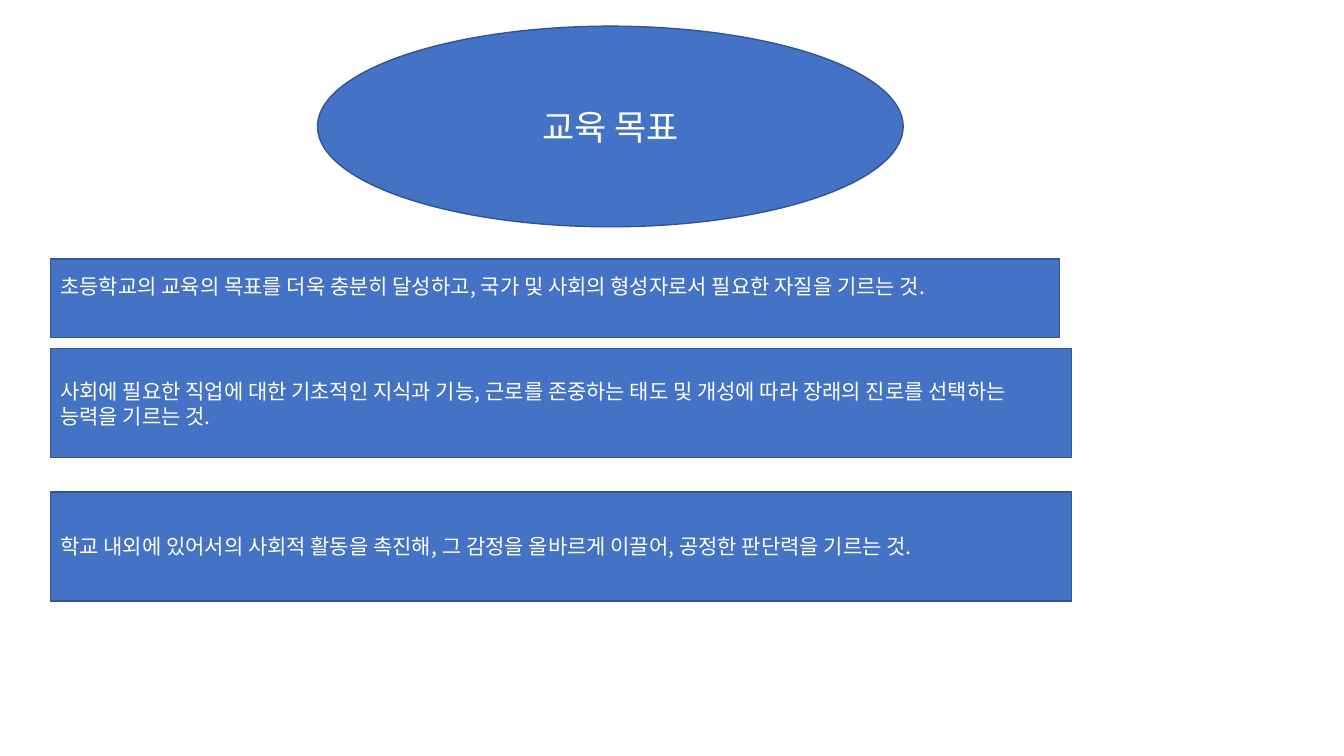
from lxml.etree import SubElement
from pptx import Presentation
from pptx.dml.color import RGBColor
from pptx.enum.shapes import MSO_SHAPE
from pptx.enum.text import MSO_ANCHOR, PP_ALIGN
from pptx.oxml.ns import qn
from pptx.util import Pt

FONT = "Noto Sans CJK KR"
COLORS = {"fill": "4472C4", "line": "325491", "text": "FFFFFF"}

prs = Presentation()
prs.slide_width, prs.slide_height = Pt(960), Pt(540)
s = prs.slides.add_slide(prs.slide_layouts[6])


def add_panel(text, box, kind=MSO_SHAPE.RECTANGLE, size=15, align=PP_ALIGN.LEFT, bottom=3.6):
    sp = s.shapes.add_shape(kind, *[Pt(v) for v in box])
    sp.shadow.inherit = False
    sp.fill.solid()
    sp.fill.fore_color.rgb = RGBColor.from_string(COLORS["fill"])
    sp.line.color.rgb = RGBColor.from_string(COLORS["line"])
    sp.line.width = Pt(1)
    tf = sp.text_frame
    tf.word_wrap = True
    tf.vertical_anchor = MSO_ANCHOR.MIDDLE
    tf.margin_bottom = Pt(bottom)
    p = tf.paragraphs[0]
    p.alignment = align
    r = p.add_run()
    r.text = text
    r.font.size = Pt(size)
    r.font.name = FONT
    r.font.color.rgb = RGBColor.from_string(COLORS["text"])
    SubElement(r.font._element, qn("a:ea"), typeface=FONT)


add_panel("교육 목표", (226.8, 18.7, 418.3, 143.3), kind=MSO_SHAPE.OVAL, size=25, align=PP_ALIGN.CENTER)

goals = [
    ("초등학교의 교육의 목표를 더욱 충분히 달성하고, 국가 및 사회의 형성자로서 필요한 자질을 기르는 것.", 185, 720.7, 56.2, 21.6),
    ("사회에 필요한 직업에 대한 기초적인 지식과 기능, 근로를 존중하는 태도 및 개성에 따라 장래의 진로를 선택하는 능력을 기르는 것.", 249.1, 729.4, 77.8, 3.6),
    ("학교 내외에 있어서의 사회적 활동을 촉진해, 그 감정을 올바르게 이끌어, 공정한 판단력을 기르는 것.", 351.4, 729.4, 77.8, 3.6),
]
for text, top, width, height, bottom in goals:
    add_panel(text, (36, top, width, height), bottom=bottom)

prs.save("out.pptx")
